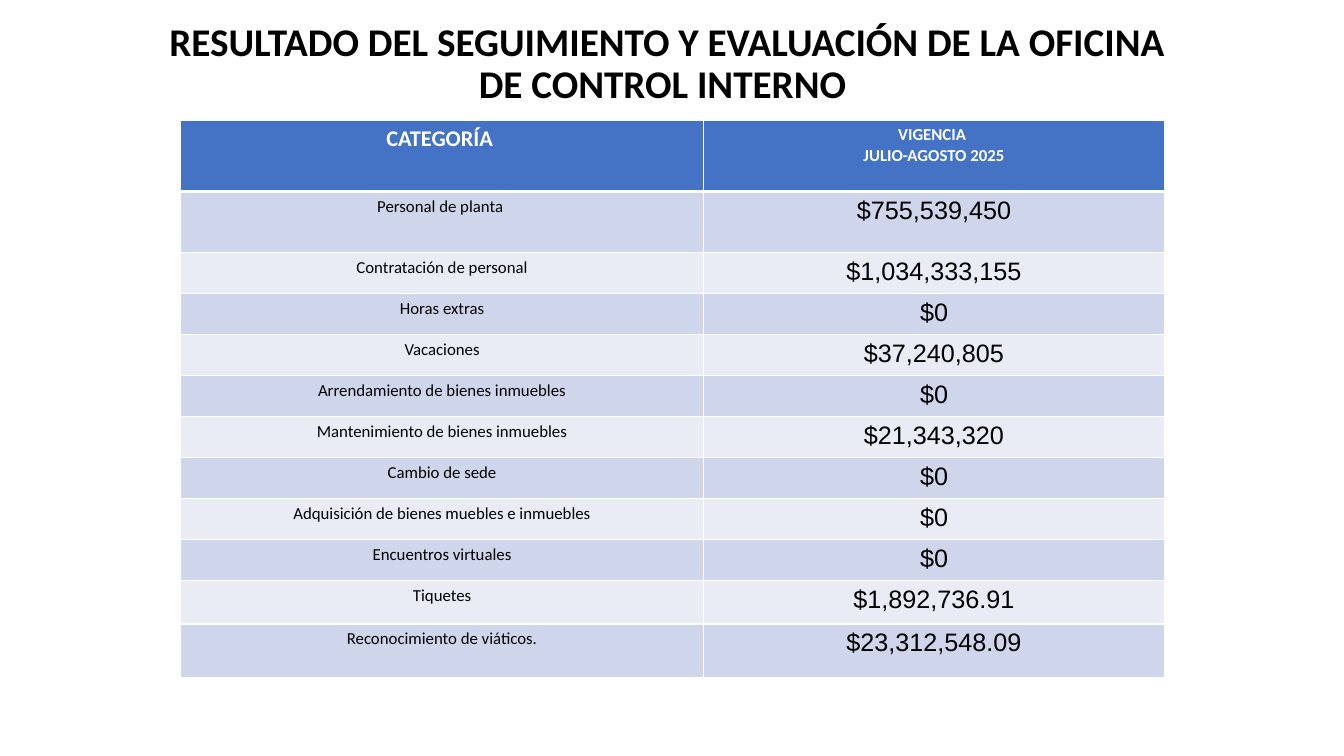
import dataclasses

import pptx
import pptx.dml.color
import pptx.enum.text
import pptx.oxml
import pptx.oxml.ns
import pptx.util

Pt = pptx.util.Pt
CENTER = pptx.enum.text.PP_ALIGN.CENTER


@dataclasses.dataclass(frozen=True)
class Theme:
    ink: str = "000000"
    paper: str = "FFFFFF"
    header: str = "4472C4"
    bands: tuple = ("CFD5EA", "E9EBF5")
    label_font: str = "Calibri"
    amount_font: str = "Arial"
    title_size: int = 28
    category_size: int = 16
    amount_size: int = 18
    label_size: int = 12
    rule: int = 1
    header_rule: int = 3


THEME = Theme()

TITLE = "RESULTADO DEL SEGUIMIENTO Y EVALUACIÓN DE LA OFICINA DE CONTROL INTERNO "
EXPENSES = [
    ("Personal de planta ", "$755,539,450"),
    ("Contratación de personal", "$1,034,333,155"),
    ("Horas extras", "$0"),
    ("Vacaciones", "$37,240,805"),
    ("Arrendamiento de bienes inmuebles", "$0"),
    ("Mantenimiento de bienes inmuebles", "$21,343,320"),
    ("Cambio de sede", "$0"),
    ("Adquisición de bienes muebles e inmuebles", "$0"),
    ("Encuentros virtuales", "$0"),
    ("Tiquetes", "$1,892,736.91"),
    ("Reconocimiento de viáticos.", "$23,312,548.09"),
]
ROW_HEIGHTS = [51.2, 43.6] + [29.28] * 8 + [31.2, 38.6]
CATEGORY_SHARE = 0.532


def rgb(color):
    return pptx.dml.color.RGBColor.from_string(color)


def write_lines(frame, lines, size, color, font=THEME.label_font, bold=False):
    """Write each line as a centred paragraph."""
    for index, line in enumerate(lines):
        para = frame.paragraphs[0] if index == 0 else frame.add_paragraph()
        para.alignment = CENTER
        span = para.add_run()
        span.text = line
        span.font.size = Pt(size)
        span.font.name = font
        span.font.bold = bold
        span.font.color.rgb = rgb(color)


def style_cell(cell, fill, top, bottom):
    """Fill the cell and rule its sides; top and bottom are line widths."""
    properties = cell._tc.get_or_add_tcPr()
    widths = {"lnL": THEME.rule, "lnR": THEME.rule, "lnT": top, "lnB": bottom}
    for tag, width in widths.items():
        properties.append(pptx.oxml.parse_xml(
            f'<a:{tag} {pptx.oxml.ns.nsdecls("a")} w="{Pt(width)}"><a:solidFill>'
            f'<a:srgbClr val="{THEME.paper}"/></a:solidFill></a:{tag}>'))
    cell.fill.solid()
    cell.fill.fore_color.rgb = rgb(fill)


def place_title(page, left, top, width, height):
    title = page.shapes.title
    title.left, title.top = Pt(left), Pt(top)
    title.width, title.height = Pt(width), Pt(height)
    frame = title.text_frame
    frame.word_wrap = True
    frame.auto_size = pptx.enum.text.MSO_AUTO_SIZE.NONE
    frame.vertical_anchor = pptx.enum.text.MSO_ANCHOR.MIDDLE
    write_lines(frame, [TITLE], THEME.title_size, THEME.ink, bold=True)
    frame.paragraphs[0].line_spacing = 0.9


def place_expenses(page, left, top, width):
    table = page.shapes.add_table(
        len(ROW_HEIGHTS), 2, Pt(left), Pt(top), Pt(width), Pt(sum(ROW_HEIGHTS))).table
    for column, share in zip(table.columns, (CATEGORY_SHARE, 1 - CATEGORY_SHARE)):
        column.width = Pt(width * share)
    for row, height in zip(table.rows, ROW_HEIGHTS):
        row.height = Pt(height)

    category, period = table.rows[0].cells
    write_lines(category.text_frame, ["CATEGORÍA "],
                THEME.category_size, THEME.paper, bold=True)
    write_lines(period.text_frame, ["VIGENCIA ", "JULIO-AGOSTO 2025"],
                THEME.label_size, THEME.paper, bold=True)
    for cell in (category, period):
        style_cell(cell, THEME.header, THEME.rule, THEME.header_rule)

    for index, (label, amount) in enumerate(EXPENSES):
        label_cell, amount_cell = table.rows[index + 1].cells
        write_lines(label_cell.text_frame, [label], THEME.label_size, THEME.ink)
        write_lines(amount_cell.text_frame, [amount],
                    THEME.amount_size, THEME.ink, THEME.amount_font)
        top_rule = THEME.header_rule if index == 0 else THEME.rule
        for cell in (label_cell, amount_cell):
            style_cell(cell, THEME.bands[index % 2], top_rule, THEME.rule)


def main():
    deck = pptx.Presentation()
    deck.slide_width, deck.slide_height = Pt(960), Pt(540)
    page = deck.slides.add_slide(deck.slide_layouts.get_by_name("Title Only"))
    place_title(page, 112.3, 7.2, 728, 78.5)
    place_expenses(page, 128.9, 85.7, 702.7)
    deck.save("out.pptx")


if __name__ == "__main__":
    main()
